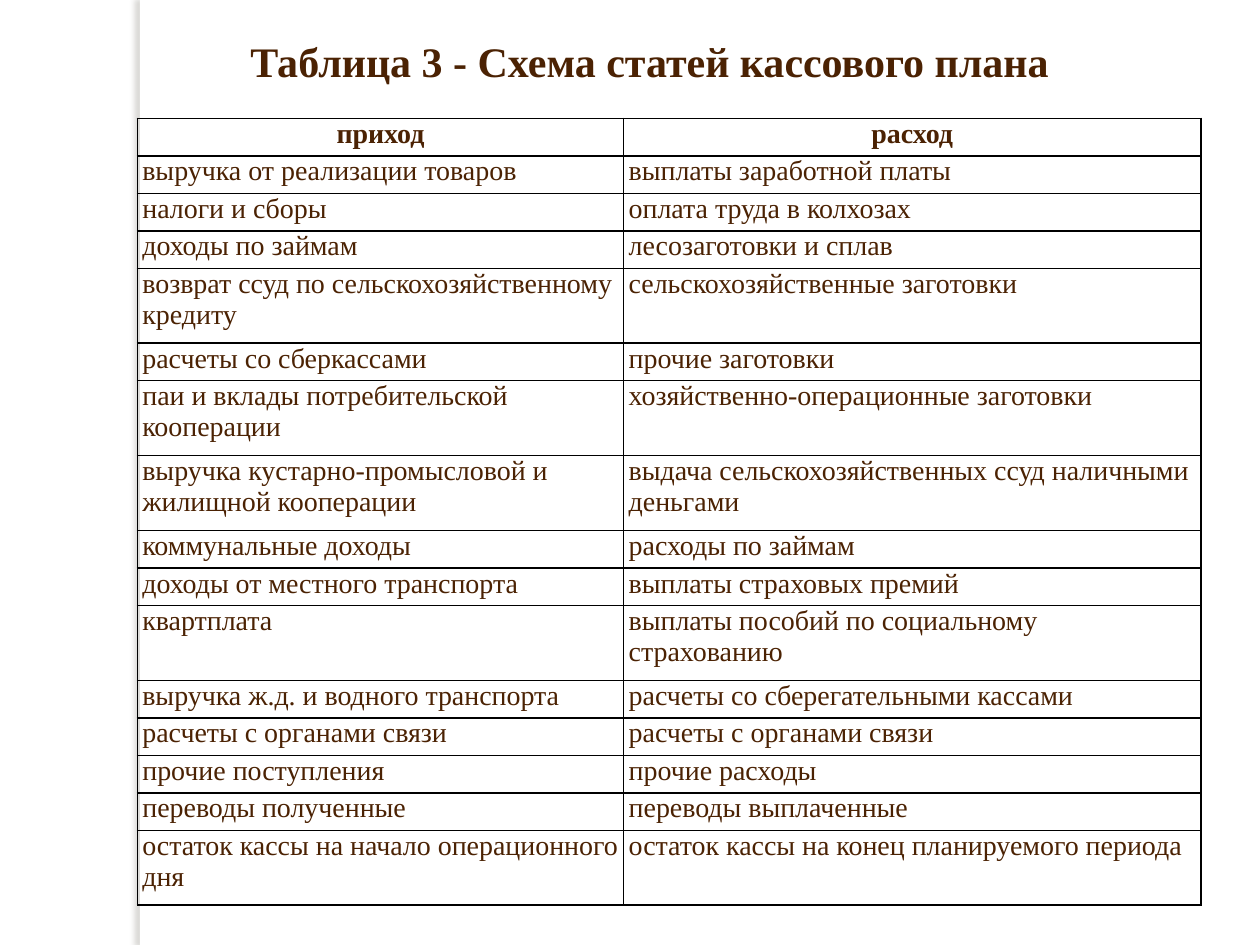
"""Build a slide with a table of cash plan items."""
from dataclasses import dataclass

from lxml import etree
from pptx import Presentation
from pptx.dml.color import RGBColor
from pptx.enum.shapes import MSO_SHAPE
from pptx.enum.text import MSO_ANCHOR, PP_ALIGN
from pptx.oxml import parse_xml
from pptx.oxml.ns import nsdecls, qn
from pptx.util import Inches, Pt

CENTER, LEFT = PP_ALIGN.CENTER, PP_ALIGN.LEFT
MIDDLE, TOP = MSO_ANCHOR.MIDDLE, MSO_ANCHOR.TOP
RECTANGLE = MSO_SHAPE.RECTANGLE
TITLE_ONLY = 5


@dataclass(frozen=True)
class Theme:
    font: str = "Times New Roman"
    text: str = "4B2203"
    border: str = "000000"
    paper: str = "FFFFFF"
    shadow: str = "736F63"
    title_size: int = 24
    cell_size: int = 16
    border_width: int = 1


@dataclass(frozen=True)
class Entry:
    income: str
    expense: str
    lines: int = 1


@dataclass(frozen=True)
class Box:
    left: float
    top: float
    width: float
    height: float

    def lengths(self) -> tuple:
        return tuple(Inches(value) for value in (self.left, self.top, self.width, self.height))


THEME = Theme()
SLIDE_WIDTH, SLIDE_HEIGHT = 10, 7.5
STRIP = Box(1.11, 0, 0.08, SLIDE_HEIGHT)
TITLE = Box(1.64, 0.23, 7.03, 0.5)
TABLE = Box(1.09, 0.94, 8.44, 6.25)
COLUMN_WIDTHS = (3.86, 4.58)
CELL_MARGIN = 0.04
ENTRIES = (
    Entry("приход", "расход"),
    Entry("выручка от реализации товаров", "выплаты заработной платы"),
    Entry("налоги и сборы", "оплата труда в колхозах"),
    Entry("доходы по займам", "лесозаготовки и сплав"),
    Entry("возврат ссуд по сельскохозяйственному кредиту", "сельскохозяйственные заготовки", 2),
    Entry("расчеты со сберкассами", "прочие заготовки"),
    Entry("паи и вклады потребительской кооперации", "хозяйственно-операционные заготовки", 2),
    Entry("выручка кустарно-промысловой и жилищной кооперации",
          "выдача сельскохозяйственных ссуд наличными деньгами", 2),
    Entry("коммунальные доходы", "расходы по займам"),
    Entry("доходы от местного транспорта", "выплаты страховых премий"),
    Entry("квартплата", "выплаты пособий по социальному страхованию", 2),
    Entry("выручка ж.д. и водного транспорта", "расчеты со сберегательными кассами"),
    Entry("расчеты с органами связи", "расчеты с органами связи"),
    Entry("прочие поступления", "прочие расходы"),
    Entry("переводы полученные", "переводы выплаченные"),
    Entry("остаток кассы на начало операционного дня",
          "остаток кассы на конец планируемого периода", 2),
)


def write_text(text_frame, text: str, size: int, bold: bool, alignment) -> None:
    paragraph = text_frame.paragraphs[0]
    paragraph.alignment = alignment
    run = paragraph.add_run()
    run.text = text
    run.font.name = THEME.font
    run.font.size = Pt(size)
    run.font.bold = bold
    run.font.color.rgb = RGBColor.from_string(THEME.text)


def add_strip(slide) -> None:
    shape = slide.shapes.add_shape(RECTANGLE, *STRIP.lengths())
    shape.fill.solid()
    shape.fill.fore_color.rgb = RGBColor.from_string(THEME.paper)
    shape.line.fill.background()
    shape.shadow.inherit = False
    effects = shape.element.spPr.find(qn("a:effectLst"))
    effects.append(parse_xml(
        f'<a:outerShdw {nsdecls("a")} blurRad="{Pt(3)}" dist="{Pt(3)}" dir="10800000" '
        f'algn="tl" rotWithShape="0"><a:srgbClr val="{THEME.shadow}">'
        '<a:alpha val="25000"/></a:srgbClr></a:outerShdw>'))


def add_title(slide) -> None:
    title = slide.shapes.title
    title.left, title.top, title.width, title.height = TITLE.lengths()
    title.text_frame.word_wrap = True
    title.text_frame.vertical_anchor = MIDDLE
    write_text(title.text_frame, "Таблица 3 - Схема статей кассового плана",
               THEME.title_size, True, CENTER)


def set_borders(cell) -> None:
    properties = cell._tc.get_or_add_tcPr()
    for side in ("lnL", "lnR", "lnT", "lnB"):
        line = etree.SubElement(properties, qn(f"a:{side}"), w=str(Pt(THEME.border_width)))
        fill = etree.SubElement(line, qn("a:solidFill"))
        etree.SubElement(fill, qn("a:srgbClr"), val=THEME.border)


def fill_cell(cell, text: str, is_header: bool) -> None:
    cell.margin_left = cell.margin_right = Inches(CELL_MARGIN)
    cell.margin_top = cell.margin_bottom = 0
    cell.vertical_anchor = TOP
    set_borders(cell)
    cell.fill.background()
    write_text(cell.text_frame, text, THEME.cell_size, is_header, CENTER if is_header else LEFT)


def add_plan_table(slide) -> None:
    table = slide.shapes.add_table(len(ENTRIES), len(COLUMN_WIDTHS), *TABLE.lengths()).table
    table.horz_banding = False
    table.first_row = False
    for column, width in zip(table.columns, COLUMN_WIDTHS):
        column.width = Inches(width)
    line_height = TABLE.height / sum(entry.lines for entry in ENTRIES)
    for index, entry in enumerate(ENTRIES):
        table.rows[index].height = Inches(line_height * entry.lines)
        for column, text in enumerate((entry.income, entry.expense)):
            fill_cell(table.cell(index, column), text, index == 0)


def main() -> None:
    presentation = Presentation()
    presentation.slide_width = Inches(SLIDE_WIDTH)
    presentation.slide_height = Inches(SLIDE_HEIGHT)
    slide = presentation.slides.add_slide(presentation.slide_layouts[TITLE_ONLY])
    slide.background.fill.solid()
    slide.background.fill.fore_color.rgb = RGBColor.from_string(THEME.paper)
    add_strip(slide)
    add_plan_table(slide)
    add_title(slide)
    presentation.save("out.pptx")


if __name__ == "__main__":
    main()
